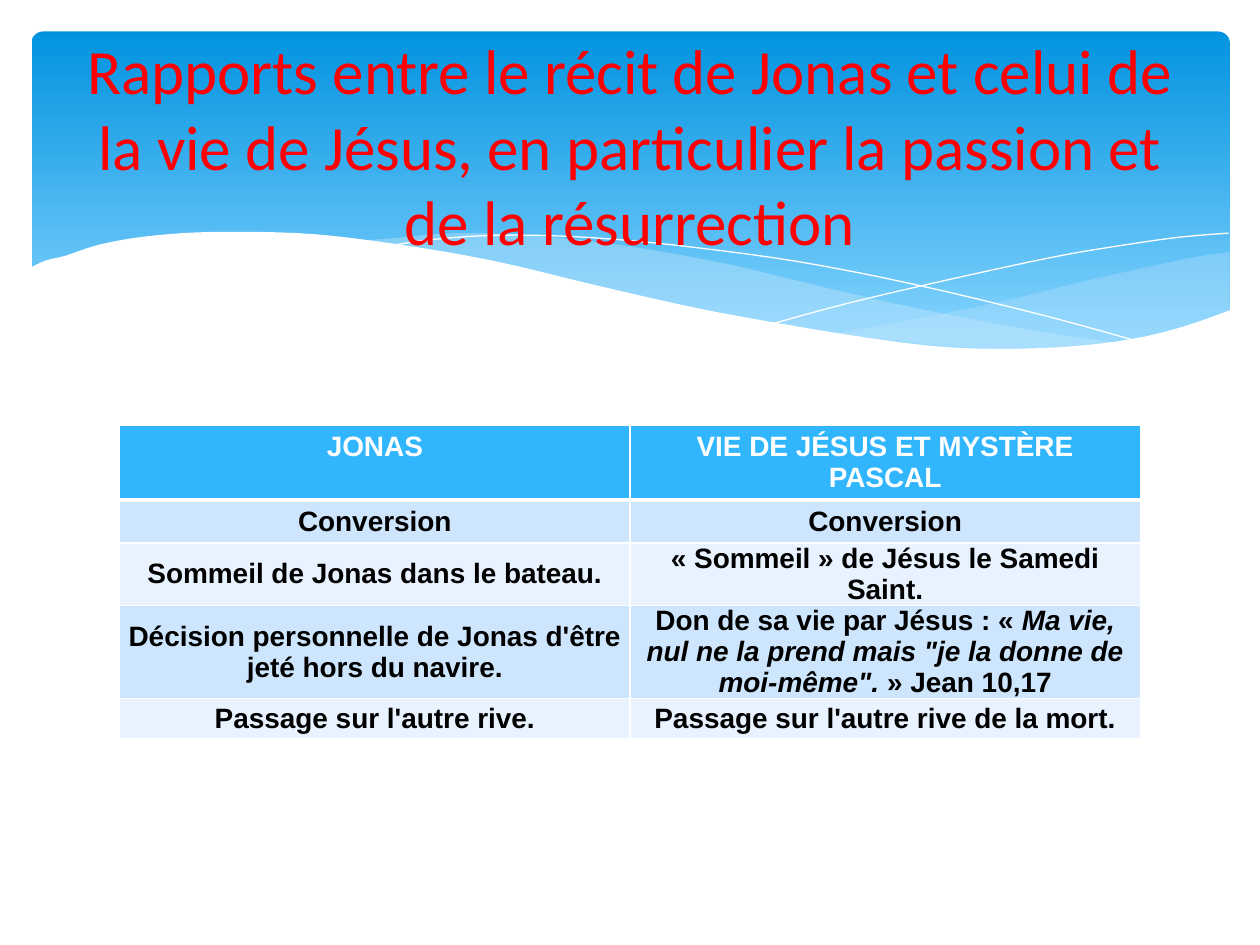
from lxml import etree
from pptx import Presentation
from pptx.dml.color import RGBColor
from pptx.enum.shapes import MSO_SHAPE
from pptx.enum.text import MSO_ANCHOR, MSO_AUTO_SIZE, PP_ALIGN
from pptx.oxml.ns import qn
from pptx.util import Pt

ROUNDED = MSO_SHAPE.ROUNDED_RECTANGLE
CENTER = PP_ALIGN.CENTER
TOP, MIDDLE = MSO_ANCHOR.TOP, MSO_ANCHOR.MIDDLE
NO_AUTOFIT = MSO_AUTO_SIZE.NONE


def color(value):
    return RGBColor.from_string(value)


def smooth(points, steps=4):
    padded = [points[0], *points, points[-1]]
    curve = []
    for a, b, c, d in zip(padded, padded[1:], padded[2:], padded[3:]):
        for step in range(steps):
            t = step / steps
            curve.append(tuple(
                q + t * (r - p) / 2
                + t * t * (2 * p - 5 * q + 4 * r - s) / 2
                + t ** 3 * (3 * q - p - 3 * r + s) / 2
                for p, q, r, s in zip(a, b, c, d)
            ))
    return curve + [points[-1]]


class Slide:
    title_font = "Calibri"
    table_font = "Arial"
    white = "FFFFFF"
    header_fill = "31B6FD"
    band_fills = ("CEE5FE", "E8F3FF")

    def __init__(self, deck):
        self.page = deck.slides.add_slide(deck.slide_layouts[5])

    def banner(self, left, top, width, height, stops):
        shape = self.page.shapes.add_shape(
            ROUNDED, Pt(left), Pt(top), Pt(width), Pt(height))
        shape.shadow.inherit = False
        shape.adjustments[0] = 0.034
        shape.line.fill.background()
        shape.fill.gradient()
        shape.fill.gradient_angle = 270
        for stop, (position, value) in zip(shape.fill.gradient_stops, stops):
            stop.position = position
            stop.color.rgb = color(value)

    def outline(self, points, closed):
        start, *rest = [(Pt(x), Pt(y)) for x, y in points]
        builder = self.page.shapes.build_freeform(*start)
        builder.add_line_segments(rest, close=closed)
        shape = builder.convert_to_shape()
        shape.shadow.inherit = False
        return shape

    def wave(self, points, fill, opacity=100):
        shape = self.outline(points, True)
        shape.line.fill.background()
        shape.fill.solid()
        shape.fill.fore_color.rgb = color(fill)
        if opacity < 100:
            value = shape.fill._xPr.find(".//" + qn("a:srgbClr"))
            etree.SubElement(value, qn("a:alpha"), val=str(opacity * 1000))

    def curve(self, points):
        shape = self.outline(smooth(points), False)
        shape.fill.background()
        shape.line.color.rgb = color(self.white)
        shape.line.width = Pt(0)

    def title(self, text, left, top, width, height):
        box = self.page.shapes.title
        box.left, box.top, box.width, box.height = map(
            Pt, (left, top, width, height))
        frame = box.text_frame
        frame.text = text
        frame.word_wrap = True
        frame.auto_size = NO_AUTOFIT
        frame.vertical_anchor = MIDDLE
        para = frame.paragraphs[0]
        para.alignment = CENTER
        font = para.runs[0].font
        font.name, font.size = self.title_font, Pt(36)
        font.color.rgb = color("FF0000")
        self.page.shapes._spTree.append(box._element)

    def borders(self, cell, top, bottom):
        properties = cell._tc.get_or_add_tcPr()
        widths = {"lnL": 1, "lnR": 1, "lnT": top, "lnB": bottom}
        for index, (side, width) in enumerate(widths.items()):
            line = etree.Element(qn("a:" + side), w=str(Pt(width)))
            fill = etree.SubElement(line, qn("a:solidFill"))
            etree.SubElement(fill, qn("a:srgbClr"), val=self.white)
            properties.insert(index, line)

    def cell(self, cell, spans, row):
        header = row == 0
        if not header:
            cell.margin_left = cell.margin_right = Pt(2)
            cell.margin_top = cell.margin_bottom = Pt(0)
        cell.vertical_anchor = TOP if header else MIDDLE
        cell.fill.solid()
        cell.fill.fore_color.rgb = color(
            self.header_fill if header else self.band_fills[(row - 1) % 2])
        self.borders(cell, 3 if row == 1 else 1, 3 if header else 1)
        para = cell.text_frame.paragraphs[0]
        para.alignment = CENTER
        for index, text in enumerate(spans):
            span = para.add_run()
            span.text = text
            font = span.font
            font.name, font.size, font.bold = self.table_font, Pt(16), True
            font.italic = index % 2 == 1
            font.color.rgb = color(self.white if header else "000000")

    def table(self, rows, left, top, width, heights):
        columns = len(rows[0])
        table = self.page.shapes.add_table(
            len(rows), columns, Pt(left), Pt(top), Pt(width),
            Pt(sum(heights))).table
        table.horz_banding = False
        for column in table.columns:
            column.width = Pt(width / columns)
        for row, (contents, height) in enumerate(zip(rows, heights)):
            table.rows[row].height = Pt(height)
            for column, spans in enumerate(contents):
                self.cell(table.cell(row, column), spans, row)


RIGHT_CREST = [(702.72, 144), (682.6, 146.9), (652.3, 153.4), (619.9, 160.6),
               (579.6, 170.6), (542.2, 178.6), (508.3, 185), (475.9, 190.8)]
RIGHT_BASE = [(517.7, 195.1), (554, 198.7), (586, 200.2), (622, 198.7),
              (651.6, 193.7), (673.2, 188.6), (702.72, 177.8)]
LONG_CREST = [(643, 196.6), (602.6, 190.8), (558, 182.9), (508.3, 172.8),
              (452.9, 159.8), (420.5, 151.9), (389.5, 145.8), (361.4, 141.1),
              (334.8, 137.5), (302.4, 134.6), (273.6, 133.2), (247.7, 133.9),
              (225.4, 136.1), (205.9, 137.5)]
LONG_BASE = [(246.2, 143.3), (290.9, 151.9), (323.3, 159.8), (381.6, 172.8),
             (432.7, 183.6), (478.8, 191.5), (520, 197.3), (556.6, 199.4),
             (589, 200.2), (617, 199.4)]
FALLING_LINE = [(222.5, 140.4), (247.7, 136.8), (278.6, 134.6),
                (311.8, 134.6), (352, 136.8), (400.3, 141.8), (457.9, 149.8),
                (523.4, 162.7), (598.3, 180.7), (653, 195.8)]
RISING_LINE = [(441.4, 185), (483.8, 173.5), (538.6, 160.6), (601.9, 146.9),
               (644.4, 139.7), (675.4, 135.4), (702, 133.2)]
WHITE_CREST = [(703.4, 177.1), (676.8, 186.5), (647.3, 193.7), (612, 198),
               (572.4, 199.4), (535.7, 198), (495.4, 193), (451, 185.8),
               (399.6, 176.4), (342, 163.4), (281.5, 149), (227.5, 139.7),
               (180, 133.9), (139, 132.5), (105.1, 133.2), (76.3, 136.1),
               (54.7, 140.4), (37.4, 146.2), (25.9, 149), (16.6, 153.4)]
WHITE_FOOT = [(16.6, 236.9), (703.4, 236.9)]

ROWS = [
    (["JONAS"], ["VIE DE JÉSUS ET MYSTÈRE PASCAL"]),
    (["Conversion"], ["Conversion"]),
    (["Sommeil de Jonas dans le bateau."],
     ["« Sommeil » de Jésus le Samedi Saint."]),
    (["Décision personnelle de Jonas d'être jeté hors du navire."],
     ["Don de sa vie par Jésus : « ",
      "Ma vie, nul ne la prend mais \"je la donne de moi-même\". ",
      "» Jean 10,17"]),
    (["Passage sur l'autre rive."], ["Passage sur l'autre rive de la mort."]),
]


def main():
    deck = Presentation()
    deck.slide_width, deck.slide_height = Pt(720), Pt(540)
    slide = Slide(deck)
    slide.banner(18, 18, 684.72, 194.4, [(0, "0293E0"), (0.9, "83D3FE")])
    slide.wave(smooth(RIGHT_CREST) + smooth(RIGHT_BASE), "C6E7FC", 29)
    slide.wave(smooth(LONG_CREST) + smooth(LONG_BASE), "C6E7FC", 40)
    slide.curve(FALLING_LINE)
    slide.curve(RISING_LINE)
    slide.wave(smooth(WHITE_CREST) + WHITE_FOOT, "FFFFFF")
    slide.table(ROWS, 68.4, 243, 583.2, [25.2, 24.5, 34.6, 33.8, 23])
    slide.title("Rapports entre le récit de Jonas et celui de la vie de Jésus, "
                "en particulier la passion et de la résurrection",
                36, 40.3, 648, 85)
    deck.save("out.pptx")


if __name__ == "__main__":
    main()
